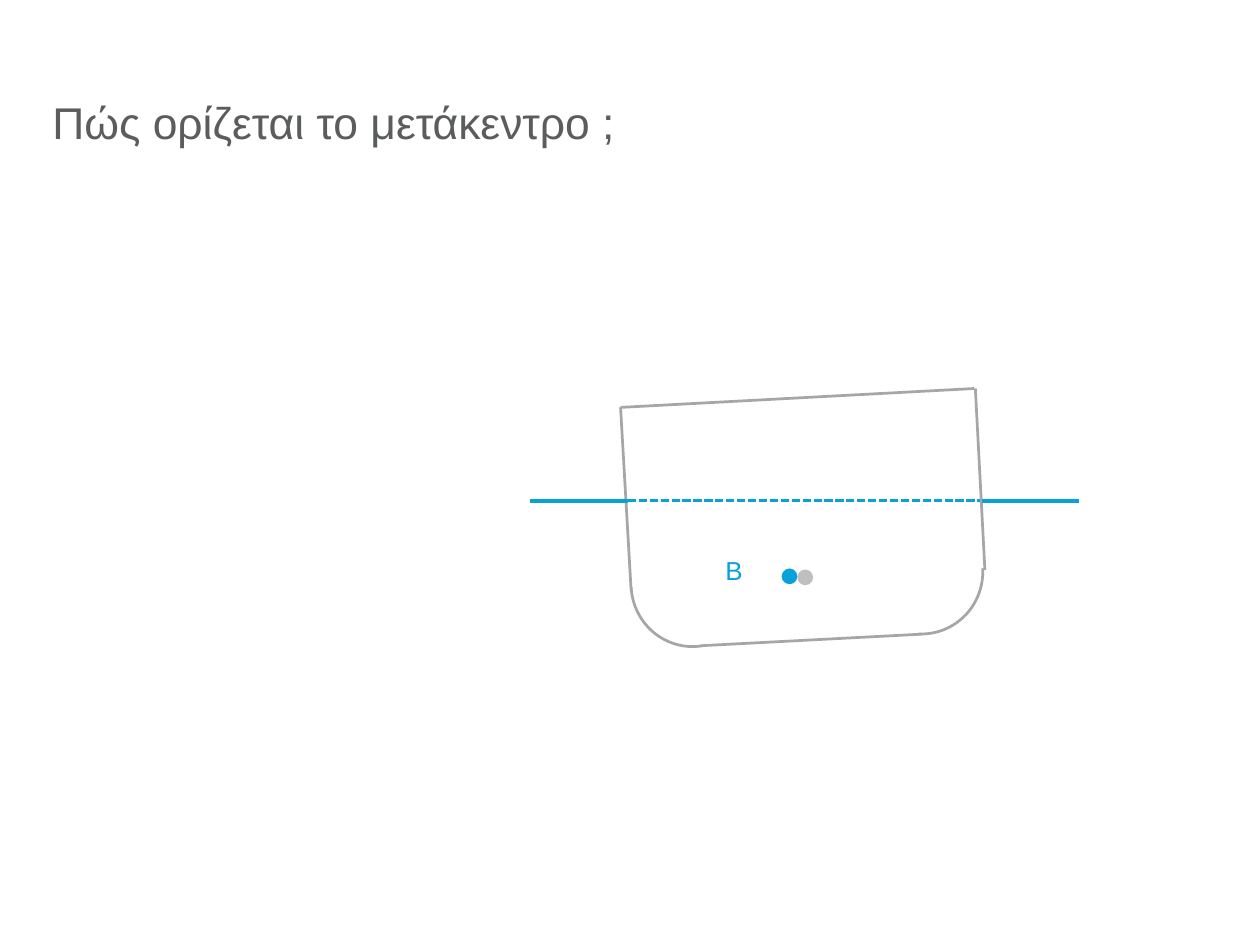
from typing import NamedTuple

from pptx import Presentation
from pptx.dml.color import RGBColor
from pptx.enum.dml import MSO_LINE_DASH_STYLE as Dash
from pptx.enum.shapes import MSO_CONNECTOR as Connector, MSO_SHAPE as Shape
from pptx.enum.text import MSO_ANCHOR as Anchor, PP_ALIGN as Align
from pptx.oxml.ns import qn
from pptx.oxml.xmlchemy import OxmlElement
from pptx.util import Cm, Pt

COLORS = {"water": "08A1D9", "hull": "A6A6A6", "title": "5B5C5E", "old_center": "BFBFBF"}
WATER_Y = 4.77
BILGE_ANGLES = (162, 3.264)
DOT_SIZE = 0.15


class Line(NamedTuple):
    start: tuple[float, float]
    end: tuple[float, float]
    color: str = "hull"
    width: float = 0.75
    dash: Dash | None = None


class Bilge(NamedTuple):
    left: float
    top: float
    rotation: float
    mirrored: bool


class Center(NamedTuple):
    x: float
    y: float
    color: str


WATERLINE_INSIDE = Line((5.98, WATER_Y), (9.35, WATER_Y), "water", dash=Dash.SQUARE_DOT)
WATERLINE_OUTSIDE = [
    Line((5.05, WATER_Y), (5.98, WATER_Y), "water", 1),
    Line((9.35, WATER_Y), (10.28, WATER_Y), "water", 1),
]
HULL_SIDES = [
    Line((5.91, 3.88), (9.28, 3.7)),
    Line((5.91, 3.88), (6.01, 5.61)),
    Line((9.29, 3.7), (9.38, 5.43)),
    Line((6.67, 6.15), (8.77, 6.04)),
]
BILGES = [Bilge(8.18, 4.86, 87, False), Bilge(6, 4.98, 267, True)]
BUOYANCY_CENTERS = [Center(7.67, 5.5, "old_center"), Center(7.52, 5.49, "water")]


def rgb(color: str) -> RGBColor:
    return RGBColor.from_string(COLORS[color])


def draw_line(shapes, line: Line) -> None:
    connector = shapes.add_connector(
        Connector.STRAIGHT, *(Cm(value) for value in line.start + line.end)
    )
    connector.line.color.rgb = rgb(line.color)
    connector.line.width = Pt(line.width)
    if line.dash is not None:
        connector.line.dash_style = line.dash
    connector._element.spPr.append(OxmlElement("a:effectLst"))


def draw_bilge(shapes, bilge: Bilge) -> None:
    """Draw a rounded lower corner of the hull."""
    arc = shapes.add_shape(Shape.ARC, Cm(bilge.left), Cm(bilge.top), Cm(1.19), Cm(1.17))
    arc.adjustments[0], arc.adjustments[1] = BILGE_ANGLES
    arc.rotation = bilge.rotation
    if bilge.mirrored:
        arc._element.spPr.find(qn("a:xfrm")).set("flipH", "1")
    arc.fill.background()
    arc.line.color.rgb = rgb("hull")
    arc.line.width = Pt(0.75)
    arc.shadow.inherit = False


def draw_center(shapes, center: Center) -> None:
    dot = shapes.add_shape(
        Shape.OVAL,
        Cm(center.x - DOT_SIZE / 2),
        Cm(center.y - DOT_SIZE / 2),
        Cm(DOT_SIZE),
        Cm(DOT_SIZE),
    )
    dot.fill.solid()
    dot.fill.fore_color.rgb = rgb(center.color)
    dot.line.fill.background()
    dot.shadow.inherit = False


def write(
    holder, text: str, *, size: float, color: str,
    anchor: Anchor = Anchor.TOP, spacing: float = 1.0,
) -> None:
    frame = holder.text_frame
    frame.word_wrap = True
    frame.vertical_anchor = anchor
    frame.margin_left = frame.margin_right = frame.margin_top = frame.margin_bottom = 0
    paragraph = frame.paragraphs[0]
    paragraph.alignment = Align.LEFT
    paragraph.line_spacing = spacing
    run = paragraph.add_run()
    run.text = text
    run.font.name = "Arial"
    run.font.size = Pt(size)
    run.font.color.rgb = rgb(color)


def main() -> None:
    deck = Presentation()
    deck.slide_width, deck.slide_height = Cm(12), Cm(9)
    slide = deck.slides.add_slide(deck.slide_layouts[5])
    shapes = slide.shapes

    title = shapes.title
    title.left, title.top, title.width, title.height = Cm(0.5), Cm(0.5), Cm(11), Cm(1.2)
    write(title, "Πώς ορίζεται το μετάκεντρο ;", size=12, color="title",
          anchor=Anchor.MIDDLE, spacing=1.25)

    draw_line(shapes, WATERLINE_INSIDE)
    hull = shapes.add_group_shape()
    for side in HULL_SIDES:
        draw_line(hull.shapes, side)
    for bilge in BILGES:
        draw_bilge(hull.shapes, bilge)
    for waterline in WATERLINE_OUTSIDE:
        draw_line(shapes, waterline)

    buoyancy_label = shapes.add_textbox(Cm(6.91), Cm(5.28), Cm(0.46), Cm(0.46))
    write(buoyancy_label, "B", size=7, color="water")
    for center in BUOYANCY_CENTERS:
        draw_center(shapes, center)

    deck.save("out.pptx")


if __name__ == "__main__":
    main()
